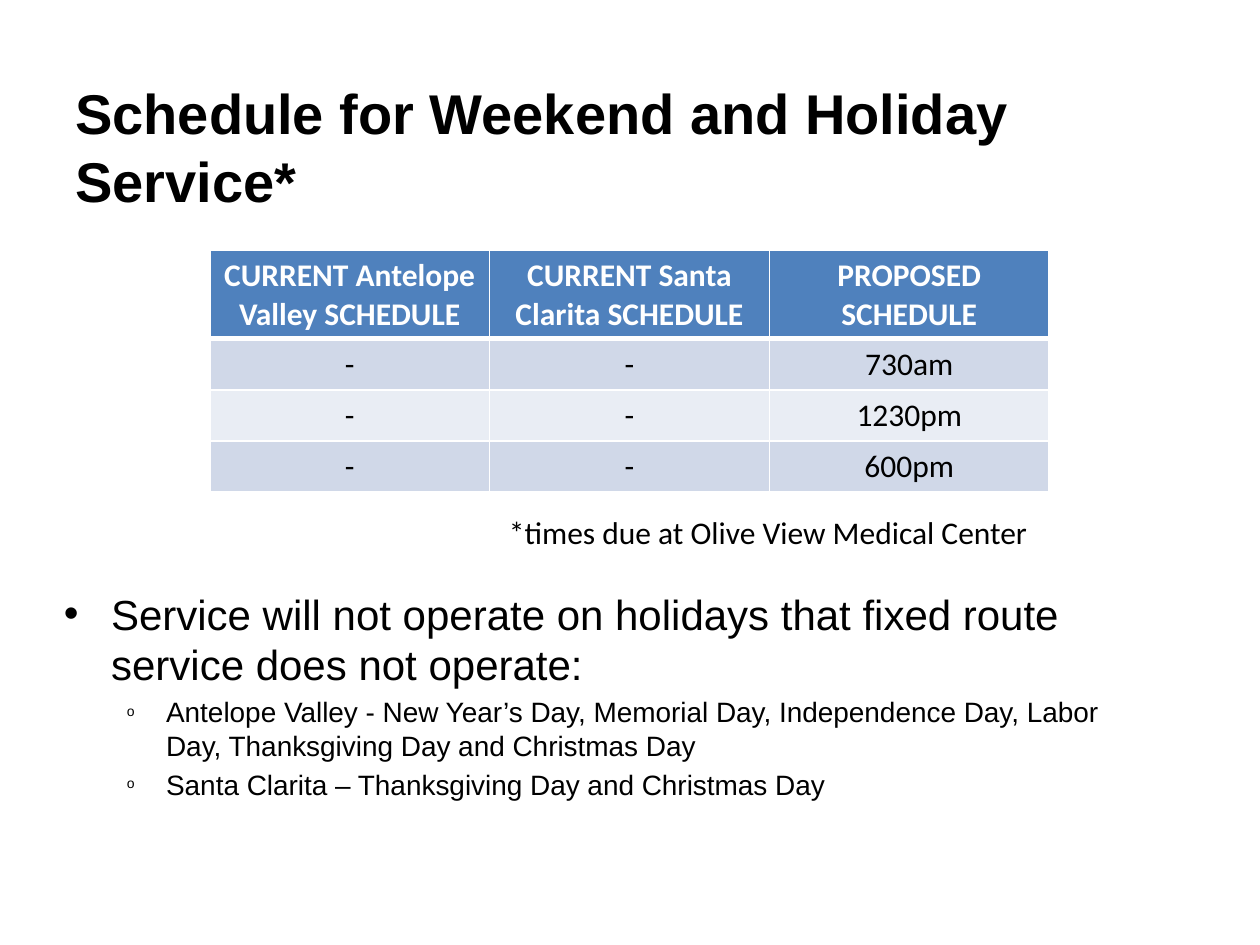
from dataclasses import dataclass

from lxml.etree import SubElement
from pptx import Presentation
from pptx.dml.color import RGBColor
from pptx.enum.text import MSO_ANCHOR, PP_ALIGN
from pptx.oxml.ns import qn
from pptx.slide import Slide
from pptx.util import Cm, Pt

COLORS = {
    "text": "000000",
    "white": "FFFFFF",
    "header": "4F81BD",
    "band_dark": "D0D8E8",
    "band_light": "E9EDF4",
}

TITLE = {"name": "Arial", "size": Pt(32), "bold": True}
HEADER = {"name": "Calibri", "size": Pt(18), "bold": True}
BODY = {"name": "Calibri", "size": Pt(18), "bold": False}
BULLET = {"name": "Arial", "size": Pt(24), "bold": False}
SUB_BULLET = {"name": "Arial", "size": Pt(16), "bold": False}

SCHEDULE = [
    ("CURRENT Antelope Valley SCHEDULE", "CURRENT Santa Clarita SCHEDULE",
     "PROPOSED SCHEDULE"),
    ("-", "-", "730am"),
    ("-", "-", "1230pm"),
    ("-", "-", "600pm"),
]


@dataclass
class Line:
    text: str
    fmt: dict
    bullet: str = ""
    bullet_pct: int = 100
    left: float = 0
    hang: float = 0
    level: int = 0
    before: float = 0


@dataclass
class Box:
    left: float
    top: float
    width: float
    height: float
    lines: list[Line]
    wrap: bool = True
    anchor: MSO_ANCHOR = MSO_ANCHOR.TOP


def rgb(key: str) -> RGBColor:
    return RGBColor.from_string(COLORS[key])


def write(p, text: str, fmt: dict, color: str = "text") -> None:
    r = p.add_run()
    r.text = text
    for name, value in fmt.items():
        setattr(r.font, name, value)
    r.font.color.rgb = rgb(color)


def add_bullet(p, line: Line) -> None:
    pPr = p._p.get_or_add_pPr()
    pPr.set("marL", str(Cm(line.left)))
    pPr.set("indent", str(-Cm(line.hang)))
    SubElement(pPr, qn("a:buSzPct"), val=str(line.bullet_pct * 1000))
    SubElement(pPr, qn("a:buFont"), typeface="Arial")
    SubElement(pPr, qn("a:buChar"), char=line.bullet)


def add_box(s: Slide, box: Box) -> None:
    sp = s.shapes.add_textbox(Cm(box.left), Cm(box.top), Cm(box.width), Cm(box.height))
    tf = sp.text_frame
    tf.word_wrap = box.wrap
    tf.vertical_anchor = box.anchor
    for i, line in enumerate(box.lines):
        p = tf.add_paragraph() if i else tf.paragraphs[0]
        p.level = line.level
        if line.before:
            p.space_before = Pt(line.before)
        if line.bullet:
            add_bullet(p, line)
        write(p, line.text, line.fmt)


def set_borders(cell, widths: dict[str, float]) -> None:
    tcPr = cell._tc.get_or_add_tcPr()
    for side, width in widths.items():
        ln = SubElement(tcPr, qn(f"a:ln{side}"), w=str(Pt(width)))
        fill = SubElement(ln, qn("a:solidFill"))
        SubElement(fill, qn("a:srgbClr"), val=COLORS["white"])


def add_schedule(s: Slide, left: float, top: float, col_width: float,
                 heights: list[float]) -> None:
    rows, cols = len(SCHEDULE), len(SCHEDULE[0])
    table = s.shapes.add_table(rows, cols, Cm(left), Cm(top),
                               Cm(col_width * cols), Cm(sum(heights))).table
    for col in table.columns:
        col.width = Cm(col_width)
    for i, texts in enumerate(SCHEDULE):
        table.rows[i].height = Cm(heights[i])
        fill = "header" if i == 0 else "band_dark" if i % 2 else "band_light"
        for j, text in enumerate(texts):
            cell = table.cell(i, j)
            # The thick rule under the header is shared with the first row
            set_borders(cell, {"L": 1, "R": 1, "T": 3 if i == 1 else 1,
                               "B": 3 if i == 0 else 1})
            cell.fill.solid()
            cell.fill.fore_color.rgb = rgb(fill)
            p = cell.text_frame.paragraphs[0]
            p.alignment = PP_ALIGN.CENTER
            write(p, text, BODY if i else HEADER, "text" if i else "white")


def sub_bullet(text: str) -> Line:
    return Line(text, SUB_BULLET, "o", 50, left=2.06, hang=0.79, level=1, before=3.2)


def main() -> None:
    prs = Presentation()
    prs.slide_width, prs.slide_height = Cm(25.4), Cm(19.05)
    s = prs.slides.add_slide(prs.slide_layouts[6])

    # Title
    add_box(s, Box(1.27, 2.13, 21.31, 1.63,
                   [Line("Schedule for Weekend and Holiday Service*", TITLE)],
                   anchor=MSO_ANCHOR.MIDDLE))

    # Schedule table and its footnote
    add_schedule(s, 4.23, 5.05, 5.64, [1.78, 1.03, 1.03, 1.03])
    add_box(s, Box(10.01, 10.21, 11.15, 1.02,
                   [Line("*times due at Olive View Medical Center", BODY)], wrap=False))

    # Holiday notes
    add_box(s, Box(1.04, 11.73, 22.4, 4.62, [
        Line("Service will not operate on holidays that fixed route service does not operate:",
             BULLET, "•", left=0.95, hang=0.95),
        sub_bullet("Antelope Valley - New Year’s Day, Memorial Day, Independence Day, "
                   "Labor Day, Thanksgiving Day and Christmas Day"),
        sub_bullet("Santa Clarita – Thanksgiving Day and Christmas Day"),
    ]))

    prs.save("out.pptx")


if __name__ == "__main__":
    main()
